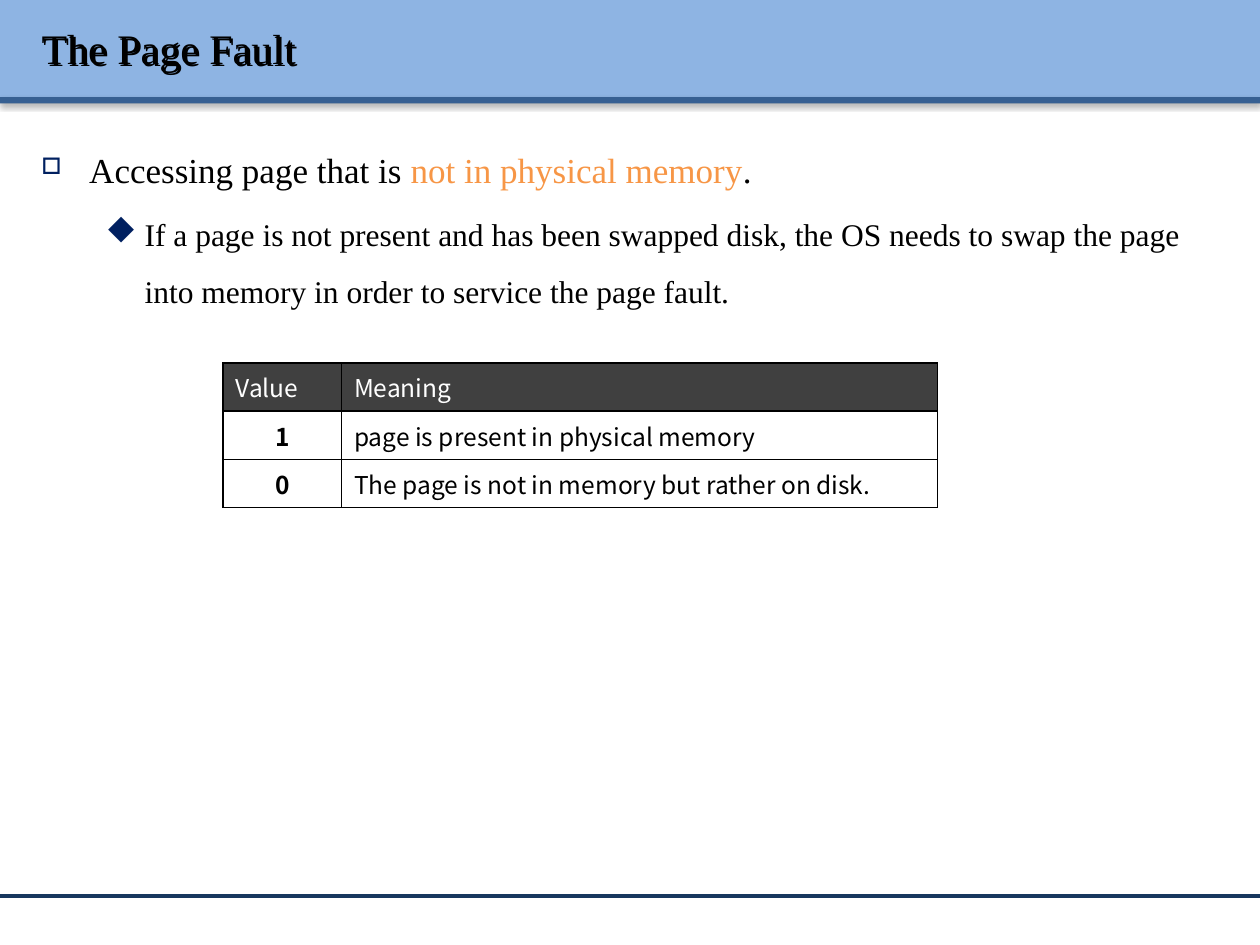
from lxml.etree import SubElement
from pptx import Presentation
from pptx.dml.color import RGBColor
from pptx.enum.shapes import MSO_CONNECTOR, MSO_SHAPE
from pptx.enum.text import MSO_ANCHOR, PP_ALIGN
from pptx.oxml import parse_xml
from pptx.oxml.ns import nsdecls, qn
from pptx.util import Inches, Pt

# Content; marks are Wingdings letters: o is a hollow square, u a diamond
TITLE = "The Page Fault"
BULLETS = [
    {"runs": [("Accessing page that is ", "black"),
              ("not in physical memory", "orange"), (".", "black")],
     "size": 20, "indent": 0.38, "hanging": 0.38, "mark": "o", "mark_size": 65},
    {"runs": [("If a page is not present and has been swapped disk, the OS needs "
               "to swap the page into memory in order to service the page fault.",
               "black")],
     "size": 18, "indent": 0.82, "hanging": 0.31, "mark": "u", "mark_size": 100},
]
TABLE = [
    ("Value", "Meaning"),
    ("1", "page is present in physical memory"),
    ("0", "The page is not in memory but rather on disk."),
]

# Style and layout
COLORS = {"band": "8EB4E3", "stripe": "376092", "footer": "17375E",
          "black": "000000", "white": "FFFFFF", "orange": "F79646",
          "mark": "002060", "header": "404040"}
SERIF, SANS, SYMBOLS = "Times New Roman", "Noto Sans CJK KR", "Wingdings"
WIDTH, HEIGHT = 10, 7.5
MARGIN, TEXT_WIDTH = 0.23, 9.61
BAND_HEIGHT, STRIPE_HEIGHT = 0.77, 0.05
FOOTER_TOP = 7.11
TABLE_LEFT, TABLE_TOP, TABLE_HEIGHT = 1.77, 2.88, 1.15
COLUMN_WIDTHS = (0.94, 4.73)


def color(name):
    return RGBColor.from_string(COLORS[name])


def style(font, name, size, color_name, bold=False):
    font.name, font.size, font.bold = name, Pt(size), bold
    font.color.rgb = color(color_name)


def add_shadow(shape, blur, distance, angle, alpha):
    shape._element.spPr.append(parse_xml(
        f'<a:effectLst {nsdecls("a")}><a:outerShdw blurRad="{Pt(blur)}" '
        f'dist="{Pt(distance)}" dir="{angle * 60000}" rotWithShape="0">'
        f'<a:srgbClr val="{COLORS["black"]}"><a:alpha val="{alpha * 1000}"/>'
        '</a:srgbClr></a:outerShdw></a:effectLst>'))


def add_bar(slide, top, height, color_name):
    bar = slide.shapes.add_shape(MSO_SHAPE.RECTANGLE, 0, Inches(top),
                                 Inches(WIDTH), Inches(height))
    bar.fill.solid()
    bar.fill.fore_color.rgb = color(color_name)
    bar.line.fill.background()
    add_shadow(bar, 3.1, 1.6, 90, 38)
    return bar


def add_frame(slide):
    band = add_bar(slide, 0, BAND_HEIGHT, "band")
    stripe = add_bar(slide, BAND_HEIGHT, STRIPE_HEIGHT, "stripe")
    footer = slide.shapes.add_connector(
        MSO_CONNECTOR.STRAIGHT, 0, Inches(FOOTER_TOP), Inches(WIDTH), Inches(FOOTER_TOP))
    footer.line.color.rgb = color("footer")
    footer.line.width = Pt(2)
    SubElement(footer._element.spPr, qn("a:effectLst"))
    # Keep the frame behind the title
    for shape in (footer, stripe, band):
        slide.shapes._spTree.insert(2, shape._element)


def format_title(title):
    title.left, title.top = Inches(MARGIN), Inches(0.06)
    title.width, title.height = Inches(TEXT_WIDTH), Inches(0.64)
    title.text_frame.text = TITLE
    title.text_frame.vertical_anchor = MSO_ANCHOR.MIDDLE
    paragraph = title.text_frame.paragraphs[0]
    paragraph.alignment = PP_ALIGN.LEFT
    style(paragraph.runs[0].font, SERIF, 24, "black")
    # Without a fill, the shape's shadow falls from its letters
    title.fill.background()
    add_shadow(title, 0, 1.5, 45, 100)


def add_bullets(slide):
    box = slide.shapes.add_textbox(Inches(MARGIN), Inches(0.96),
                                   Inches(TEXT_WIDTH), Inches(6.02))
    frame = box.text_frame
    frame.word_wrap = True
    for level, bullet in enumerate(BULLETS):
        paragraph = frame.add_paragraph() if level else frame.paragraphs[0]
        paragraph.level = level
        paragraph.line_spacing = 1.5
        paragraph.space_before = Pt(bullet["size"] * 0.2)
        properties = paragraph._p.get_or_add_pPr()
        properties.set("marL", str(Inches(bullet["indent"])))
        properties.set("indent", str(-Inches(bullet["hanging"])))
        mark_color = SubElement(properties, qn("a:buClr"))
        SubElement(mark_color, qn("a:srgbClr"), val=COLORS["mark"])
        SubElement(properties, qn("a:buSzPct"), val=str(bullet["mark_size"] * 1000))
        SubElement(properties, qn("a:buFont"), typeface=SYMBOLS, charset="2")
        SubElement(properties, qn("a:buChar"), char=bullet["mark"])
        for text, color_name in bullet["runs"]:
            run = paragraph.add_run()
            run.text = text
            style(run.font, SERIF, bullet["size"], color_name)


def add_borders(cell):
    properties = cell._tc.get_or_add_tcPr()
    for position, side in enumerate(("lnL", "lnR", "lnT", "lnB")):
        properties.insert(position, parse_xml(
            f'<a:{side} {nsdecls("a")} w="{Pt(1)}"><a:solidFill>'
            f'<a:srgbClr val="{COLORS["black"]}"/></a:solidFill></a:{side}>'))


def add_value_table(slide):
    table = slide.shapes.add_table(
        len(TABLE), len(COLUMN_WIDTHS), Inches(TABLE_LEFT), Inches(TABLE_TOP),
        Inches(sum(COLUMN_WIDTHS)), Inches(TABLE_HEIGHT)).table
    for column, width in zip(table.columns, COLUMN_WIDTHS):
        column.width = Inches(width)
    for r, values in enumerate(TABLE):
        for c, value in enumerate(values):
            cell = table.cell(r, c)
            is_header, is_value = r == 0, r > 0 and c == 0
            cell.text_frame.text = value
            cell.fill.solid()
            cell.fill.fore_color.rgb = color("header" if is_header else "white")
            add_borders(cell)
            paragraph = cell.text_frame.paragraphs[0]
            paragraph.alignment = PP_ALIGN.CENTER if is_value else PP_ALIGN.LEFT
            style(paragraph.runs[0].font, SANS, 14,
                  "white" if is_header else "black", is_value)


def main():
    presentation = Presentation()
    presentation.slide_width, presentation.slide_height = Inches(WIDTH), Inches(HEIGHT)
    slide = presentation.slides.add_slide(presentation.slide_layouts[5])
    add_frame(slide)
    format_title(slide.shapes.title)
    add_bullets(slide)
    add_value_table(slide)
    presentation.save("out.pptx")


if __name__ == "__main__":
    main()
